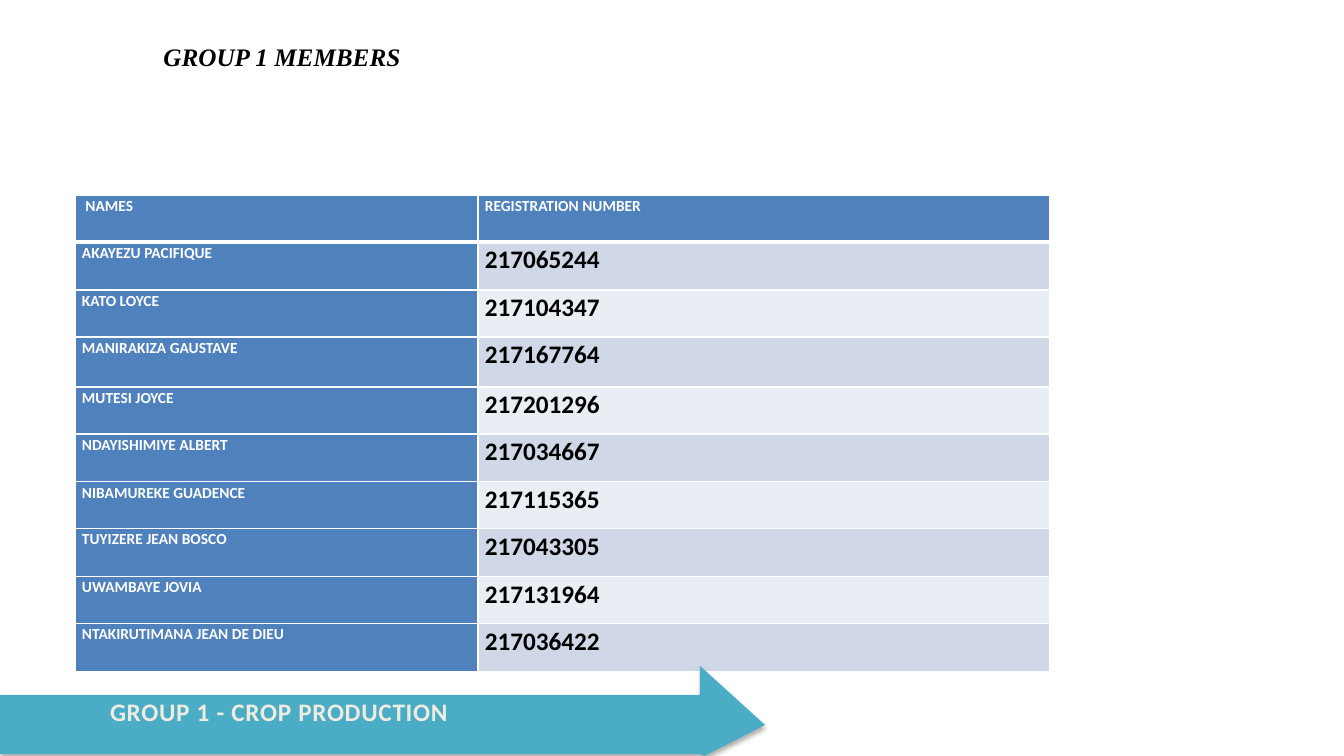
from lxml import etree
from pptx import Presentation
from pptx.dml.color import RGBColor as RGB
from pptx.enum.text import MSO_ANCHOR as ANCHOR, PP_ALIGN as ALIGN
from pptx.oxml import parse_xml
from pptx.oxml.ns import nsdecls, qn
from pptx.util import Pt

PX = 914400 / 100.8
HUES = {
    "ink": "000000", "white": "FFFFFF", "blue": "4F81BD",
    "dark": "D0D8E8", "pale": "E9EDF4", "teal": "4BACC6", "cream": "EEECE1",
}
HEAD = (" NAMES", "REGISTRATION NUMBER")
MEMBERS = [
    ("AKAYEZU PACIFIQUE", "217065244"),
    ("KATO LOYCE", "217104347"),
    ("MANIRAKIZA GAUSTAVE", "217167764"),
    ("MUTESI JOYCE", "217201296"),
    ("NDAYISHIMIYE ALBERT", "217034667"),
    ("NIBAMUREKE GUADENCE", "217115365"),
    ("TUYIZERE JEAN BOSCO", "217043305"),
    ("UWAMBAYE JOVIA", "217131964"),
    ("NTAKIRUTIMANA JEAN DE DIEU", "217036422"),
]
COLS = (403, 572)
ROWS = (47, 48, 47, 50, 47, 48, 47, 48, 47, 48)
ARROW = [(0, 695), (700, 695), (700, 666), (765, 725),
         (704, 756), (700, 754), (0, 754)]


def px(n):
    return round(n * PX)


def hue(name):
    return RGB.from_string(HUES[name])


def write(frame, text, size, color, face="Calibri"):
    """Put one bold line in the frame and return its paragraph."""
    frame.text = text
    para = frame.paragraphs[0]
    font = para.runs[0].font
    font.name, font.size, font.bold = face, Pt(size), True
    font.color.rgb = hue(color)
    return para


def add_title(slide):
    title = slide.shapes.title
    title.left, title.top, title.width, title.height = map(
        px, (147, 12, 861, 65))
    frame = title.text_frame
    frame.vertical_anchor = ANCHOR.BOTTOM
    para = write(frame, " GROUP 1 MEMBERS", 18, "ink", "Times New Roman")
    para.alignment = ALIGN.LEFT
    para.runs[0].font.italic = True


def edge(cell, **widths):
    """Draw white borders; widths are points by side: L, R, T, B."""
    props = cell._tc.get_or_add_tcPr()
    for side, width in widths.items():
        line = etree.SubElement(props, qn(f"a:ln{side}"), w=str(Pt(width)))
        fill = etree.SubElement(line, qn("a:solidFill"))
        etree.SubElement(fill, qn("a:srgbClr"), val=HUES["white"])


def fill_cell(cell, text, row, col):
    cell.margin_left = cell.margin_right = px(7)
    cell.margin_top = cell.margin_bottom = 0
    edge(cell, L=1, R=1, T=3 if row == 1 else 1, B=3 if row == 0 else 1)
    plain = row > 0 and col > 0
    band = "dark" if row % 2 else "pale"
    cell.fill.solid()
    cell.fill.fore_color.rgb = hue(band if plain else "blue")
    size, color = (18, "ink") if plain else (11, "white")
    write(cell.text_frame, text, size, color).line_spacing = 1.07


def add_members(slide):
    data = [HEAD] + MEMBERS
    table = slide.shapes.add_table(
        len(ROWS), len(COLS), px(75), px(195), px(sum(COLS)), px(sum(ROWS))
    ).table
    table.first_col = True
    for col, width in zip(table.columns, COLS):
        col.width = px(width)
    for row, height in zip(table.rows, ROWS):
        row.height = px(height)
    for r, line in enumerate(data):
        for c, text in enumerate(line):
            fill_cell(table.cell(r, c), text, r, c)


def cast(shape):
    """Give the shape a soft shadow straight below it."""
    shape._element.spPr.append(parse_xml(
        f'<a:effectLst {nsdecls("a")}>'
        f'<a:outerShdw blurRad="{Pt(3.5)}" dist="{Pt(2.2)}" dir="5400000"'
        ' rotWithShape="0"><a:srgbClr val="000000"><a:alpha val="32000"/>'
        '</a:srgbClr></a:outerShdw></a:effectLst>'))


def add_arrow(slide):
    path = slide.shapes.build_freeform(*ARROW[0], scale=PX)
    path.add_line_segments(ARROW[1:], close=True)
    arrow = path.convert_to_shape()
    arrow.fill.solid()
    arrow.fill.fore_color.rgb = hue("teal")
    arrow.line.fill.background()
    cast(arrow)
    frame = arrow.text_frame
    frame.margin_left = px(110)
    frame.vertical_anchor = ANCHOR.MIDDLE
    para = write(frame, "GROUP 1 - CROP PRODUCTION", 18, "cream")
    para.alignment = ALIGN.LEFT
    para.runs[0].font._element.set("spc", "50")


def main():
    deck = Presentation()
    deck.slide_width, deck.slide_height = px(1344), px(756)
    slide = deck.slides.add_slide(deck.slide_layouts[5])
    add_members(slide)
    add_title(slide)
    add_arrow(slide)
    deck.save("out.pptx")


if __name__ == "__main__":
    main()
